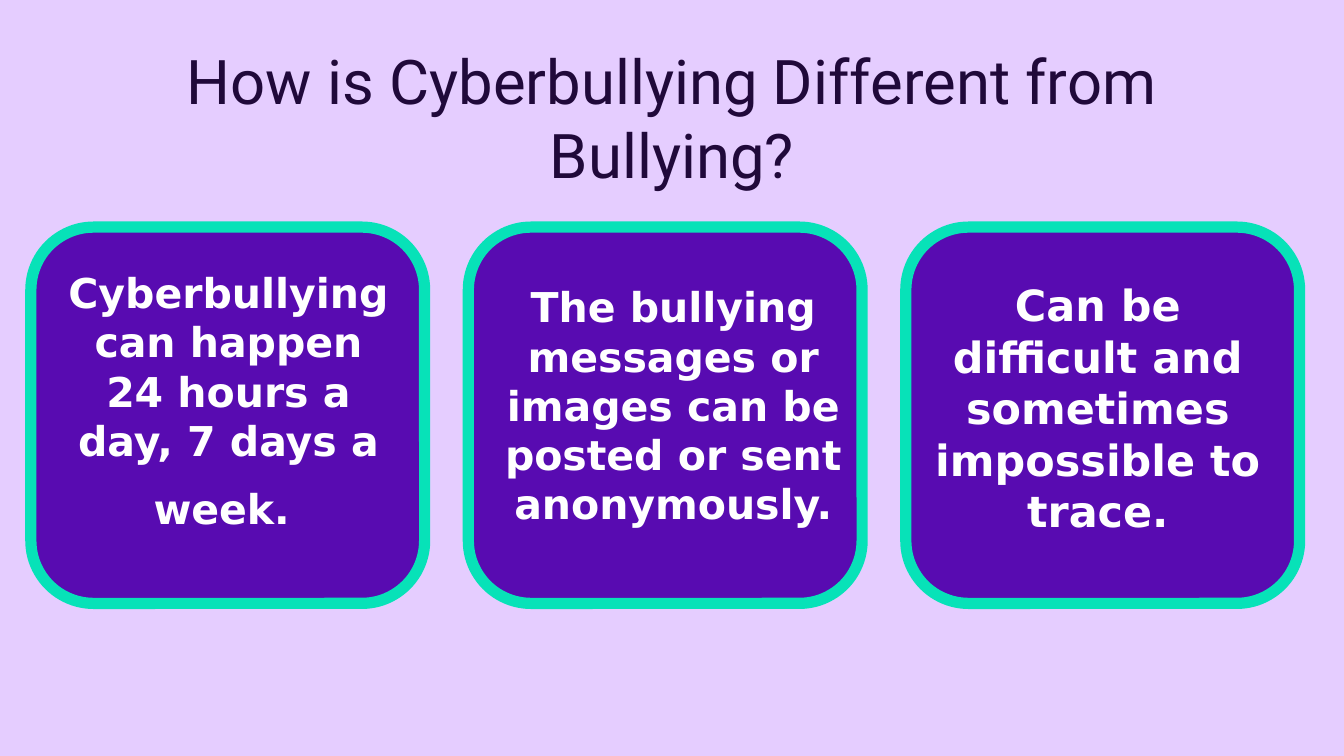
from dataclasses import dataclass

import pptx
import pptx.dml.color
import pptx.enum.shapes
import pptx.enum.text
import pptx.util

ANCHOR = pptx.enum.text.MSO_ANCHOR
INCH = pptx.util.Inches


@dataclass(frozen=True)
class Theme:
    background: str = "E5CDFF"
    card: str = "580BB1"
    border: str = "07E2B8"
    title: str = "20093A"
    body: str = "FFFFFF"
    title_font: str = "Roboto"
    body_font: str = "DejaVu Sans"
    space_font: str = "Calibri"
    title_size: int = 33
    body_size: int = 22
    large_size: int = 23
    space_size: int = 32
    border_width: int = 6


@dataclass(frozen=True)
class Box:
    left: float
    top: float
    width: float
    height: float

    def lengths(self):
        return [INCH(n) for n in (self.left, self.top, self.width, self.height)]


@dataclass(frozen=True)
class Grid:
    first: float = 0.23
    last: float = 6.74
    columns: int = 3
    top: float = 1.69
    width: float = 2.93
    height: float = 2.8

    def cell(self, column: int) -> Box:
        pitch = (self.last - self.first) / (self.columns - 1)
        return Box(self.first + column * pitch, self.top, self.width, self.height)


@dataclass(frozen=True)
class Card:
    text: str
    inset: Box
    size: int
    space_size: int = 0


THEME = Theme()
GRID = Grid()
CARDS = (
    Card("Cyberbullying can happen 24 hours a day, 7 days a week.",
         Box(0.15, 1.58, 2.64, 0.82), THEME.body_size, THEME.space_size),
    Card("The bullying messages or images can be posted or sent anonymously.",
         Box(0.06, 1.63, 2.93, 0.71), THEME.body_size),
    Card("Can be difficult and sometimes impossible to trace.",
         Box(0.11, 0.27, 2.64, 2.13), THEME.large_size),
)


def rgb(value: str) -> pptx.dml.color.RGBColor:
    return pptx.dml.color.RGBColor.from_string(value)


def add_text(s, box: Box, text: str, font: str, size: int, color: str,
             bold: bool, anchor):
    tf = s.shapes.add_textbox(*box.lengths()).text_frame
    tf.word_wrap = True
    tf.vertical_anchor = anchor
    tf.margin_left = tf.margin_right = tf.margin_top = tf.margin_bottom = INCH(0.1)
    p = tf.paragraphs[0]
    p.text = text
    p.alignment = pptx.enum.text.PP_ALIGN.CENTER
    r = p.runs[0]
    r.font.name = font
    r.font.size = pptx.util.Pt(size)
    r.font.bold = bold
    r.font.color.rgb = rgb(color)
    return p


def add_card(s, card: Card, column: int) -> None:
    cell = GRID.cell(column)
    sp = s.shapes.add_shape(pptx.enum.shapes.MSO_SHAPE.ROUNDED_RECTANGLE, *cell.lengths())
    sp.adjustments[0] = 1 / 6
    sp.shadow.inherit = False
    sp.fill.solid()
    sp.fill.fore_color.rgb = rgb(THEME.card)
    sp.line.color.rgb = rgb(THEME.border)
    sp.line.width = pptx.util.Pt(THEME.border_width)

    inset = card.inset
    box = Box(cell.left + inset.left, cell.top + inset.top, inset.width, inset.height)
    p = add_text(s, box, card.text, THEME.body_font, card.size, THEME.body,
                 True, ANCHOR.BOTTOM)
    if card.space_size:
        r = p.add_run()
        r.text = " "
        r.font.name = THEME.space_font
        r.font.size = pptx.util.Pt(card.space_size)
        r.font.bold = True
        r.font.color.rgb = rgb(THEME.body)


def main() -> None:
    prs = pptx.Presentation()
    prs.slide_width = INCH(10)
    prs.slide_height = prs.slide_width * 9 // 16
    s = prs.slides.add_slide(prs.slide_layouts[6])
    s.background.fill.solid()
    s.background.fill.fore_color.rgb = rgb(THEME.background)
    add_text(s, Box(1.28, 0.22, 7.44, 0.71),
             "How is Cyberbullying Different from Bullying?",
             THEME.title_font, THEME.title_size, THEME.title, False, ANCHOR.TOP)
    for column, card in enumerate(CARDS):
        add_card(s, card, column)
    prs.save("out.pptx")


if __name__ == "__main__":
    main()
